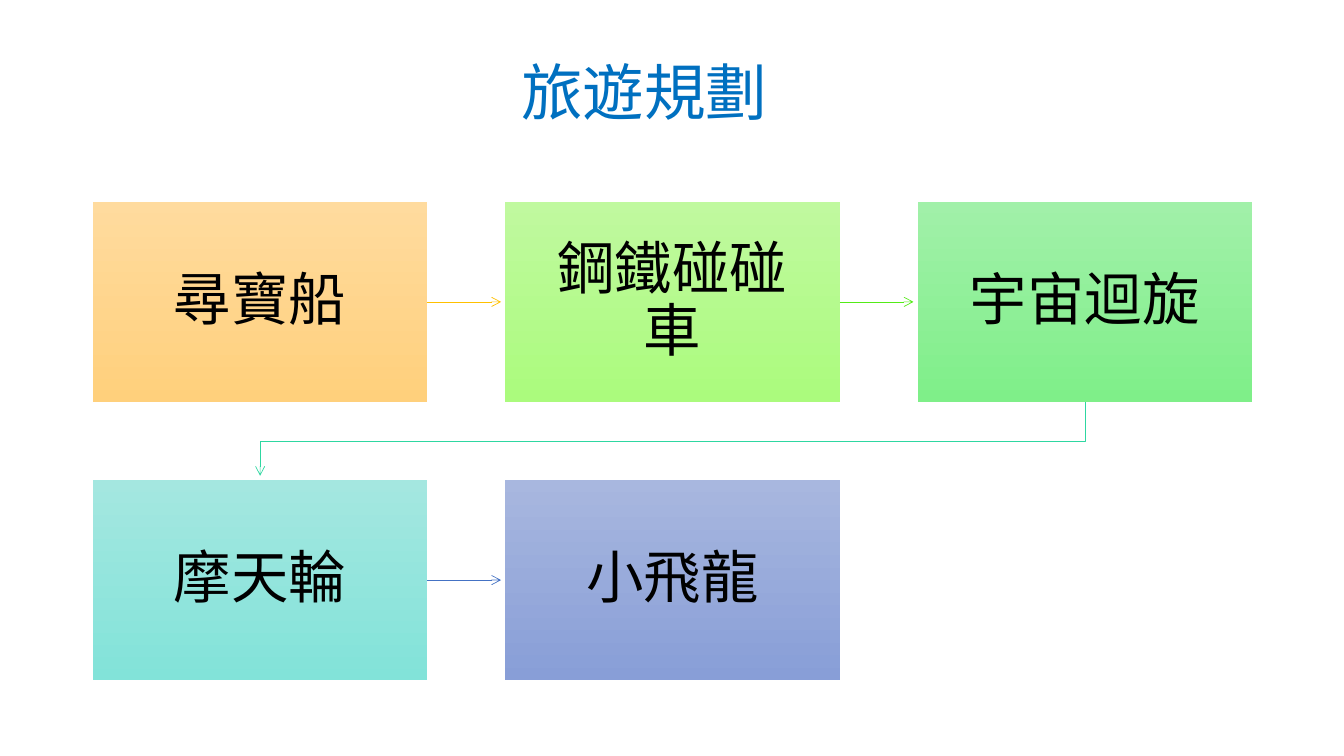
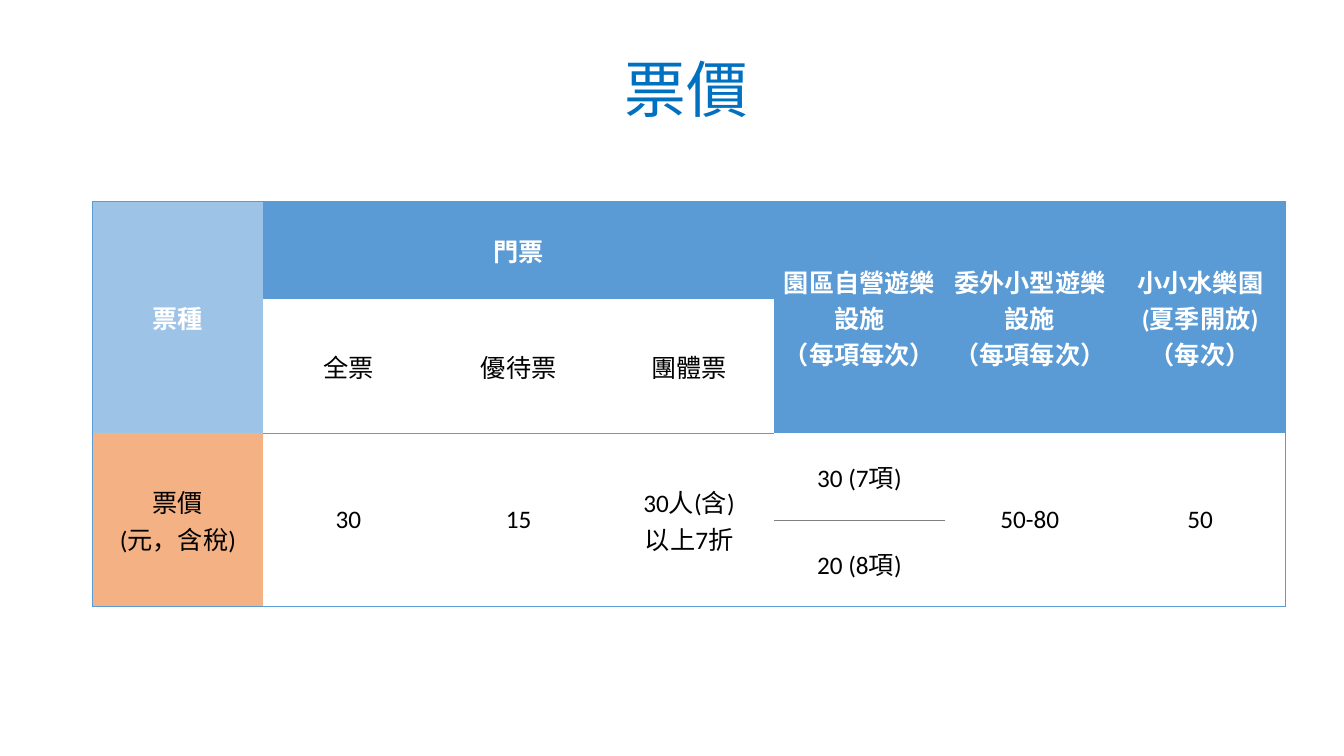
from lxml.etree import SubElement
from pptx import Presentation
from pptx.dml.color import RGBColor
from pptx.enum.shapes import MSO_CONNECTOR, MSO_SHAPE
from pptx.enum.text import MSO_ANCHOR, PP_ALIGN
from pptx.oxml.ns import qn
from pptx.util import Inches, Pt

NOTO = "Noto Sans CJK JP"
BLUE, SKY, PEACH, GREY = "5B9BD5", "9DC3E6", "F4B183", "7F7F7F"
WHITE, BLACK = "FFFFFF", "000000"
PLAIN = "{2D5ABB26-0587-4C30-8999-92F81FD0307C}"

RIDES = [
    ("尋寶船", "FFDB9E", "FFD07C"),
    ("鋼鐵碰碰車", "C0F99F", "ABFB7D"),
    ("宇宙迴旋", "A1F0A9", "7FEF89"),
    ("摩天輪", "A4E7E0", "82E3D9"),
    ("小飛龍", "A8B7DF", "889ED7"),
]
LINKS = ["FFC000", "53EB17", "2ED7A1", "4472C4"]
LEFT, TOP, WIDE, HIGH = 0.92, 2, 3.32, 1.99
STEP, DROP, GAP, ACROSS = 4.09, 2.76, 0.04, 3

PRICES = [
    ["票種", "門票", "", "", "園區自營遊樂設施\n（每項每次）",
     "委外小型遊樂設施\n（每項每次）", "小小水樂園\n(夏季開放)\n（每次）"],
    ["", "全票", "優待票", "團體票", "", "", ""],
    ["票價\n(元，含稅)", "30", "15", "30人(含)\n以上7折", "30 (7項)", "50-80", "50"],
    ["", "", "", "", "20 (8項)", "", ""],
]
ROWS = [0.97, 1.33, 0.86, 0.86]
COL = 1.69
MERGES = [(0, 1, 0, 3)]
MERGES += [(0, c, 1, c) for c in (0, 4, 5, 6)]
MERGES += [(2, c, 3, c) for c in (0, 1, 2, 3, 5, 6)]


def color(code):
    return RGBColor.from_string(code)


def write(frame, text, size=18, font="Calibri", east=NOTO, ink=BLACK,
          bold=False, align=PP_ALIGN.CENTER, space=1.0):
    frame.word_wrap = True
    frame.vertical_anchor = MSO_ANCHOR.MIDDLE
    frame.text = text
    for para in frame.paragraphs:
        para.alignment = align
        para.line_spacing = space
        for run in para.runs:
            run.font.size = Pt(size)
            run.font.name = font
            run.font.bold = bold
            run.font.color.rgb = color(ink)
            SubElement(run.font._element, qn("a:ea"), typeface=east)


def title(slide, text, left, top, wide, high):
    box = slide.shapes.add_textbox(*map(Inches, (left, top, wide, high)))
    write(box.text_frame, text, size=44, font=NOTO, ink="0070C0",
          align=PP_ALIGN.LEFT, space=0.9)


def arrow(shape, ink):
    shape.line.color.rgb = color(ink)
    shape.line.width = Pt(0.5)
    SubElement(shape.line._get_or_add_ln(), qn("a:tailEnd"), type="arrow")


def place(i):
    row, col = divmod(i, ACROSS)
    return LEFT + col * STEP, TOP + row * DROP


def ride(slide, i):
    text, light, dark = RIDES[i]
    x, y = place(i)
    box = slide.shapes.add_shape(
        MSO_SHAPE.RECTANGLE, *map(Inches, (x, y, WIDE, HIGH)))
    box.shadow.inherit = False
    box.line.fill.background()
    box.fill.gradient()
    box.fill.gradient_angle = 270
    for stop, code in zip(box.fill.gradient_stops, (light, dark)):
        stop.color.rgb = color(code)
    frame = box.text_frame
    frame.margin_left = frame.margin_right = Inches(0.32)
    frame.margin_top = frame.margin_bottom = Inches(0.32)
    write(frame, text, size=41, east="Calibri", space=0.9)


def link(slide, i):
    (x, y), (nx, ny) = place(i), place(i + 1)
    if y == ny:
        mid = y + HIGH / 2
        ends = map(Inches, (x + WIDE, mid, nx - GAP, mid))
        line = slide.shapes.add_connector(MSO_CONNECTOR.STRAIGHT, *ends)
        SubElement(line._element.spPr, qn("a:effectLst"))
    else:
        start, end = x + WIDE / 2, nx + WIDE / 2
        low = y + HIGH
        mid = (low + ny) / 2
        pen = slide.shapes.build_freeform(Inches(start), Inches(low))
        turns = [(start, mid), (end, mid), (end, ny - GAP)]
        pen.add_line_segments(
            [(Inches(a), Inches(b)) for a, b in turns], close=False)
        line = pen.convert_to_shape()
        line.fill.background()
        line.shadow.inherit = False
    arrow(line, LINKS[i])


def edges(r, c):
    found = {}
    if c == 0:
        found["L"] = BLUE
    if c == 6:
        found["R"] = BLUE
    if r == 0:
        found["T"] = BLUE
    if r == 3 or (r == 2 and c != 4) or (r == 1 and 1 <= c <= 3):
        found["B"] = BLUE
    if (r, c) == (2, 4):
        found["B"] = GREY
    return found


def border(cell, found):
    props = cell._tc.get_or_add_tcPr()
    for side in "LRTB":
        if side in found:
            line = SubElement(props, qn("a:ln" + side), w=str(Pt(0.5)))
            fill = SubElement(line, qn("a:solidFill"))
            SubElement(fill, qn("a:srgbClr"), val=found[side])


def tint(r, c):
    if c == 0:
        return SKY if r < 2 else PEACH
    return BLUE if r == 0 or (r == 1 and c > 3) else WHITE


def prices(slide):
    count = len(PRICES[0])
    size = map(Inches, (LEFT, TOP, COL * count, sum(ROWS)))
    table = slide.shapes.add_table(len(ROWS), count, *size).table
    table.first_row = table.horz_banding = False
    table._tbl.tblPr.find(qn("a:tableStyleId")).text = PLAIN
    for col in table.columns:
        col.width = Inches(COL)
    for row, high in zip(table.rows, ROWS):
        row.height = Inches(high)
    for r, c, last, end in MERGES:
        table.cell(r, c).merge(table.cell(last, end))
    for r, texts in enumerate(PRICES):
        for c, text in enumerate(texts):
            cell = table.cell(r, c)
            border(cell, edges(r, c))
            cell.fill.solid()
            cell.fill.fore_color.rgb = color(tint(r, c))
            cell.margin_left = cell.margin_right = Inches(0.03)
            cell.margin_top = cell.margin_bottom = Inches(0.03)
            head = r == 0
            write(cell.text_frame, text, ink=WHITE if head else BLACK, bold=head)
            cell.vertical_anchor = MSO_ANCHOR.MIDDLE


def main():
    deck = Presentation()
    deck.slide_width, deck.slide_height = Inches(13.33), Inches(7.5)
    blank = deck.slide_layouts[6]

    plan = deck.slides.add_slide(blank)
    title(plan, "旅遊規劃", 5.07, 0.27, 2.71, 1.35)
    for i in range(len(RIDES)):
        ride(plan, i)
    for i in range(len(LINKS)):
        link(plan, i)

    fees = deck.slides.add_slide(blank)
    title(fees, "票價", 6.1, 0.19, 1.45, 1.45)
    prices(fees)
    deck.save("out.pptx")


if __name__ == "__main__":
    main()
